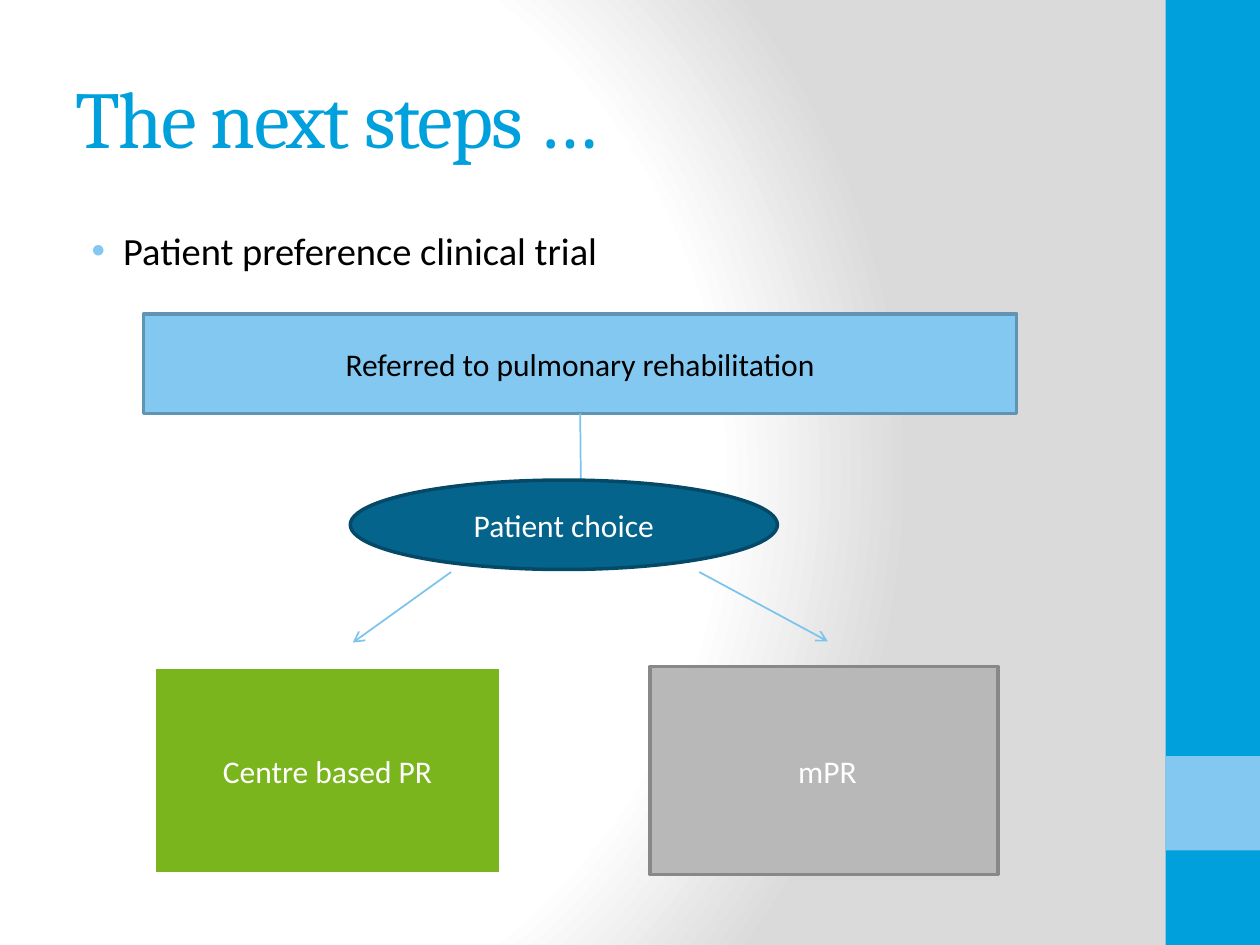
from lxml.etree import SubElement
from pptx import Presentation
from pptx.dml.color import RGBColor
from pptx.enum.shapes import MSO_CONNECTOR, MSO_SHAPE
from pptx.enum.text import MSO_ANCHOR, PP_ALIGN
from pptx.oxml import parse_xml
from pptx.oxml.ns import nsdecls, qn
from pptx.util import Inches, Pt

COLORS = {
    "blue": "00A0DC", "sky": "82C8F0", "sky_edge": "6094B2",
    "navy": "05648C", "navy_edge": "044A68", "arrow": "7CC4ED",
    "green": "7AB51D", "gray": "B8B8B8", "gray_edge": "888888",
    "mist": "DADADA", "white": "FFFFFF", "black": "000000",
}
COLUMNS, ROWS = 100, 75


def rgb(name):
    return RGBColor.from_string(COLORS[name])


class SlideBuilder:
    """Places styled elements on a grid of COLUMNS by ROWS."""

    def __init__(self, deck):
        self.column = deck.slide_width / COLUMNS
        self.row = deck.slide_height / ROWS
        self.page = deck.slides.add_slide(deck.slide_layouts[6])

    def place(self, across, down):
        return round(across * self.column), round(down * self.row)

    def glow(self, inner, outer):
        """Fill the background with a radial gradient centred left of the middle."""
        self.page.background.fill.gradient()
        gradient = self.page.element.find(".//" + qn("a:gradFill"))
        stops = "".join(
            f'<a:gs pos="{share * 1000}"><a:srgbClr val="{COLORS[name]}"/></a:gs>'
            for share, name in ((0, inner), (75, inner), (100, outer)))
        gradient.getparent().replace(gradient, parse_xml(
            f'<a:gradFill {nsdecls("a")} rotWithShape="1"><a:gsLst>{stops}</a:gsLst>'
            '<a:path path="circle"><a:fillToRect l="20000" t="50000" r="100000" b="50000"/>'
            "</a:path></a:gradFill>"))

    def style(self, para, size, color, font="Calibri"):
        for span in para.runs:
            span.font.size = Pt(size)
            span.font.name = font
            span.font.color.rgb = rgb(color)

    def shape(self, kind, left, top, width, height, fill, edge=None, weight=2,
              text="", color="white"):
        shape = self.page.shapes.add_shape(
            kind, *self.place(left, top), *self.place(width, height))
        shape.shadow.inherit = False
        shape.fill.solid()
        shape.fill.fore_color.rgb = rgb(fill)
        if edge:
            shape.line.color.rgb = rgb(edge)
            shape.line.width = Pt(weight)
        else:
            shape.line.fill.background()
        if text:
            frame = shape.text_frame
            frame.text = text
            frame.word_wrap = True
            frame.vertical_anchor = MSO_ANCHOR.MIDDLE
            frame.paragraphs[0].alignment = PP_ALIGN.CENTER
            self.style(frame.paragraphs[0], 18, color)
        return shape

    def text(self, left, top, width, height, text, size, color, font="Calibri",
             anchor=MSO_ANCHOR.TOP):
        box = self.page.shapes.add_textbox(
            *self.place(left, top), *self.place(width, height))
        frame = box.text_frame
        frame.text = text
        frame.word_wrap = True
        frame.vertical_anchor = anchor
        para = frame.paragraphs[0]
        self.style(para, size, color, font)
        return para

    def title(self, *area, text):
        para = self.text(*area, text, 46, "blue", "Cambria", MSO_ANCHOR.MIDDLE)
        para.runs[0].font._element.set("spc", "-100")

    def bullet(self, *area, text):
        para = self.text(*area, text, 22, "black")
        props = para._p.get_or_add_pPr()
        props.set("marL", str(Inches(0.38)))
        props.set("indent", str(Inches(-0.25)))
        before = SubElement(props, qn("a:spcBef"))
        SubElement(before, qn("a:spcPct")).set("val", "20000")
        tint = SubElement(props, qn("a:buClr"))
        SubElement(tint, qn("a:srgbClr")).set("val", COLORS["sky"])
        SubElement(props, qn("a:buFont")).set("typeface", "Arial")
        SubElement(props, qn("a:buChar")).set("char", "•")

    def line(self, start, end, arrow=False):
        line = self.page.shapes.add_connector(
            MSO_CONNECTOR.STRAIGHT, *self.place(*start), *self.place(*end))
        line.line.color.rgb = rgb("arrow")
        line.line.width = Pt(1)
        if arrow:
            SubElement(line.line._get_or_add_ln(), qn("a:tailEnd")).set("type", "arrow")
        SubElement(line._element.spPr, qn("a:effectLst"))
        return line


def main():
    deck = Presentation()
    deck.slide_width, deck.slide_height = Inches(10), Inches(7.5)
    slide = SlideBuilder(deck)
    slide.glow("white", "mist")

    slide.shape(MSO_SHAPE.RECTANGLE, 92.5, 0, 7.5, ROWS, "blue")
    slide.shape(MSO_SHAPE.RECTANGLE, 92.5, 60, 7.5, 7.5, "sky")
    slide.title(5, 3, 83.3, 12.5, text="The next steps …")
    slide.bullet(5, 17.5, 83.3, 52.5, text="Patient preference clinical trial")

    referral = slide.shape(MSO_SHAPE.RECTANGLE, 11.4, 24.9, 69.3, 7.9, "sky", "sky_edge",
                           text="Referred to pulmonary rehabilitation", color="black")
    for left, fill, edge, weight, text in (
            (12.2, "green", "white", 3, "Centre based PR"),
            (51.6, "gray", "gray_edge", 2, " mPR")):
        slide.shape(MSO_SHAPE.RECTANGLE, left, 52.9, 27.6, 16.5, fill, edge, weight, text)

    slide.line((46.1, 32.8), (46.1, 38.3)).begin_connect(referral, 2)
    slide.line((55.5, 45.4), (65.7, 50.9), arrow=True)
    slide.line((35.8, 45.4), (28, 51), arrow=True)
    slide.shape(MSO_SHAPE.OVAL, 27.8, 38.1, 33.9, 7.1, "navy", "navy_edge",
                text="Patient choice")

    deck.save("out.pptx")


if __name__ == "__main__":
    main()
